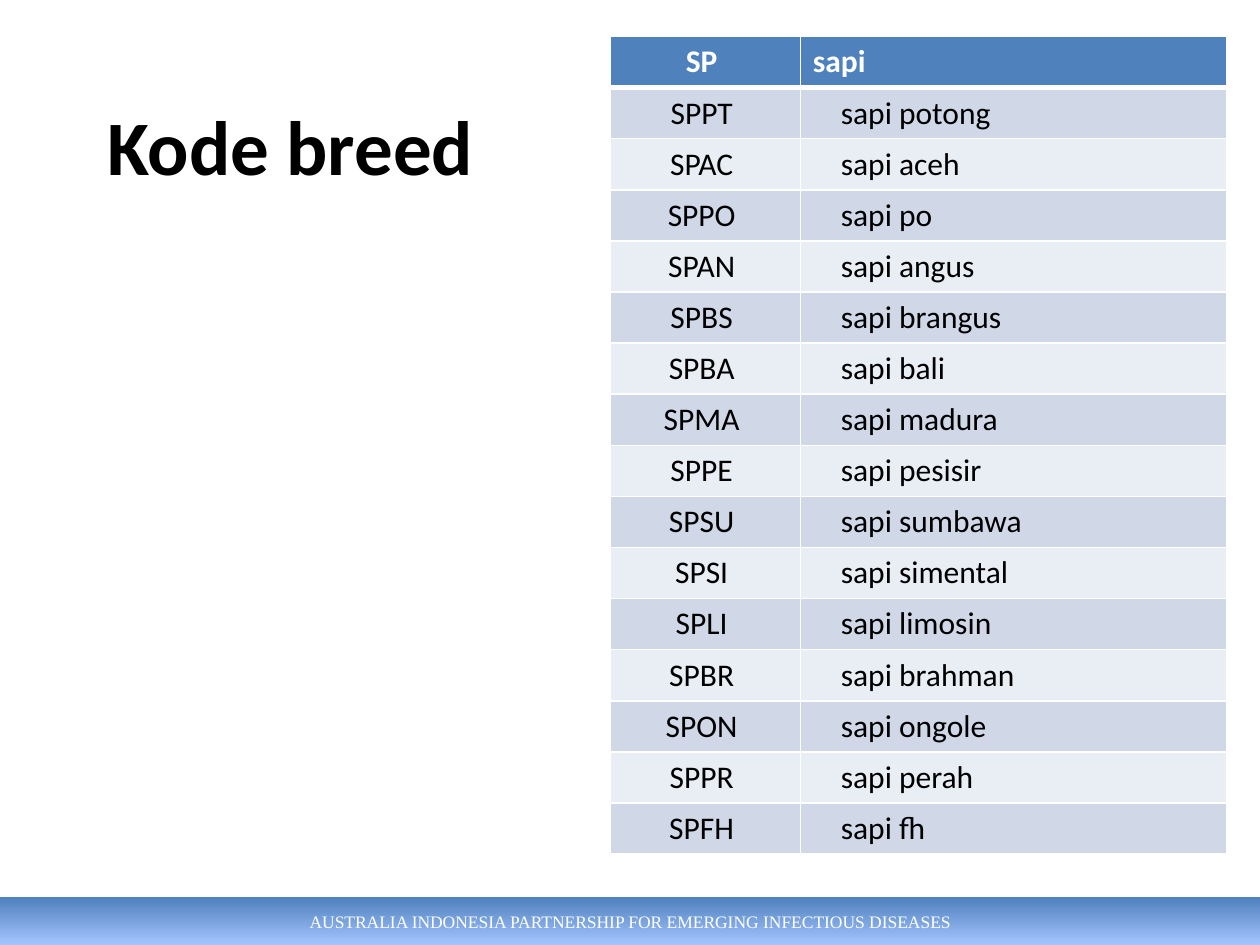
"""Build the slide that lists the cattle breed codes."""
from typing import NamedTuple

from lxml.etree import SubElement
from pptx import Presentation
from pptx.dml.color import RGBColor
from pptx.enum.shapes import MSO_SHAPE
from pptx.enum.text import MSO_ANCHOR, PP_ALIGN
from pptx.oxml.ns import qn
from pptx.util import Pt

WHITE = RGBColor(0xFF, 0xFF, 0xFF)
BLACK = RGBColor(0x00, 0x00, 0x00)
BLUE = RGBColor(0x4F, 0x81, 0xBD)
LIGHT_BLUE = RGBColor(0xA4, 0xC4, 0xFF)
BANDS = (RGBColor(0xD0, 0xD8, 0xE8), RGBColor(0xE9, 0xED, 0xF4))

TITLE_FONT = {"name": "Calibri", "size": Pt(44), "bold": True}
HEADER_FONT = {"name": "Calibri", "size": Pt(18), "bold": True}
BODY_FONT = {"name": "Calibri", "size": Pt(18), "bold": False}
FOOTER_FONT = {"name": "Times New Roman", "size": Pt(10), "bold": False}

CODE_CELL = {"margin_right": Pt(11.2), "vertical_anchor": MSO_ANCHOR.MIDDLE}
HEADER_NAME_CELL = {"margin_left": Pt(7.2), "vertical_anchor": MSO_ANCHOR.MIDDLE}
NAME_CELL = {"margin_left": Pt(23.2), "vertical_anchor": MSO_ANCHOR.MIDDLE}
COLUMN_WIDTHS = (Pt(108.7), Pt(243.5))
ROW_HEIGHT = Pt(29.2)


class Breed(NamedTuple):
    code: str
    name: str


BREEDS = (
    Breed("SP", "sapi"),
    Breed("SPPT", "sapi potong"),
    Breed("SPAC", "sapi aceh"),
    Breed("SPPO", "sapi po"),
    Breed("SPAN", "sapi angus"),
    Breed("SPBS", "sapi brangus"),
    Breed("SPBA", "sapi bali"),
    Breed("SPMA", "sapi madura"),
    Breed("SPPE", "sapi pesisir"),
    Breed("SPSU", "sapi sumbawa"),
    Breed("SPSI", "sapi simental"),
    Breed("SPLI", "sapi limosin"),
    Breed("SPBR", "sapi brahman"),
    Breed("SPON", "sapi ongole"),
    Breed("SPPR", "sapi perah"),
    Breed("SPFH", "sapi fh"),
)


def apply_format(target, values: dict) -> None:
    for name, value in values.items():
        setattr(target, name, value)


def write_text(frame, text: str, font: dict, color: RGBColor, align: PP_ALIGN) -> None:
    para = frame.paragraphs[0]
    para.alignment = align
    span = para.add_run()
    span.text = text
    apply_format(span.font, font)
    span.font.color.rgb = color


def add_borders(cell, bottom_width: Pt) -> None:
    properties = cell._tc.get_or_add_tcPr()
    widths = {"a:lnL": Pt(1), "a:lnR": Pt(1), "a:lnT": Pt(1), "a:lnB": bottom_width}
    for tag, width in widths.items():
        line = SubElement(properties, qn(tag), w=str(int(width)))
        fill = SubElement(line, qn("a:solidFill"))
        SubElement(fill, qn("a:srgbClr"), val=str(WHITE))


def add_title(page, text: str) -> None:
    title = page.shapes.title
    apply_format(title, {"left": Pt(29.5), "top": Pt(23.8),
                         "width": Pt(272.9), "height": Pt(118.1)})
    title.text_frame.vertical_anchor = MSO_ANCHOR.MIDDLE
    write_text(title.text_frame, text, TITLE_FONT, BLACK, PP_ALIGN.CENTER)


def add_breed_table(page, breeds: tuple[Breed, ...]) -> None:
    table = page.shapes.add_table(len(breeds), 2, Pt(348.6), Pt(20.9),
                                  sum(COLUMN_WIDTHS), ROW_HEIGHT * len(breeds)).table
    for column, width in zip(table.columns, COLUMN_WIDTHS):
        column.width = width
    for index, breed in enumerate(breeds):
        header = index == 0
        table.rows[index].height = ROW_HEIGHT
        font, color = (HEADER_FONT, WHITE) if header else (BODY_FONT, BLACK)
        layouts = (CODE_CELL, HEADER_NAME_CELL if header else NAME_CELL)
        aligns = (PP_ALIGN.CENTER, PP_ALIGN.LEFT)
        for column, (text, layout, align) in enumerate(zip(breed, layouts, aligns)):
            cell = table.cell(index, column)
            apply_format(cell, layout)
            add_borders(cell, Pt(3) if header else Pt(1))
            cell.fill.solid()
            cell.fill.fore_color.rgb = BLUE if header else BANDS[(index - 1) % 2]
            write_text(cell.text_frame, text, font, color, align)


def add_footer(page, text: str) -> None:
    box = page.shapes.add_shape(MSO_SHAPE.RECTANGLE, Pt(0), Pt(512.6), Pt(720), Pt(27.4))
    box.shadow.inherit = False
    box.line.fill.background()
    box.fill.gradient()
    box.fill.gradient_angle = 270
    for stop, color in zip(box.fill.gradient_stops, (BLUE, LIGHT_BLUE)):
        stop.color.rgb = color
    box.text_frame.vertical_anchor = MSO_ANCHOR.MIDDLE
    write_text(box.text_frame, text, FOOTER_FONT, WHITE, PP_ALIGN.CENTER)


def main() -> None:
    deck = Presentation()
    apply_format(deck, {"slide_width": Pt(720), "slide_height": Pt(540)})
    page = deck.slides.add_slide(deck.slide_layouts.get_by_name("Title Only"))
    add_footer(page, "AUSTRALIA INDONESIA PARTNERSHIP FOR EMERGING INFECTIOUS DISEASES")
    add_title(page, "Kode breed")
    add_breed_table(page, BREEDS)
    deck.save("out.pptx")


if __name__ == "__main__":
    main()
